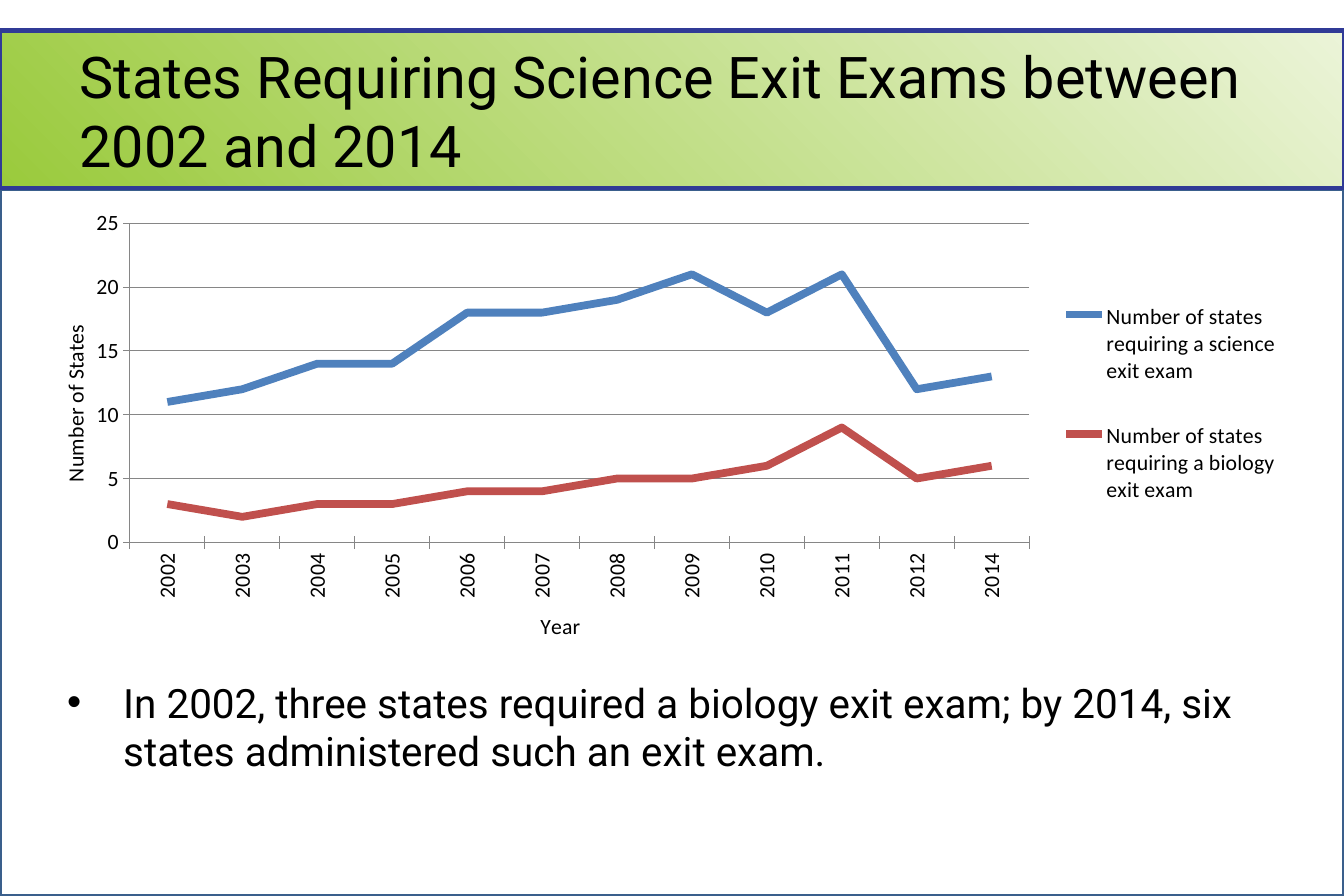
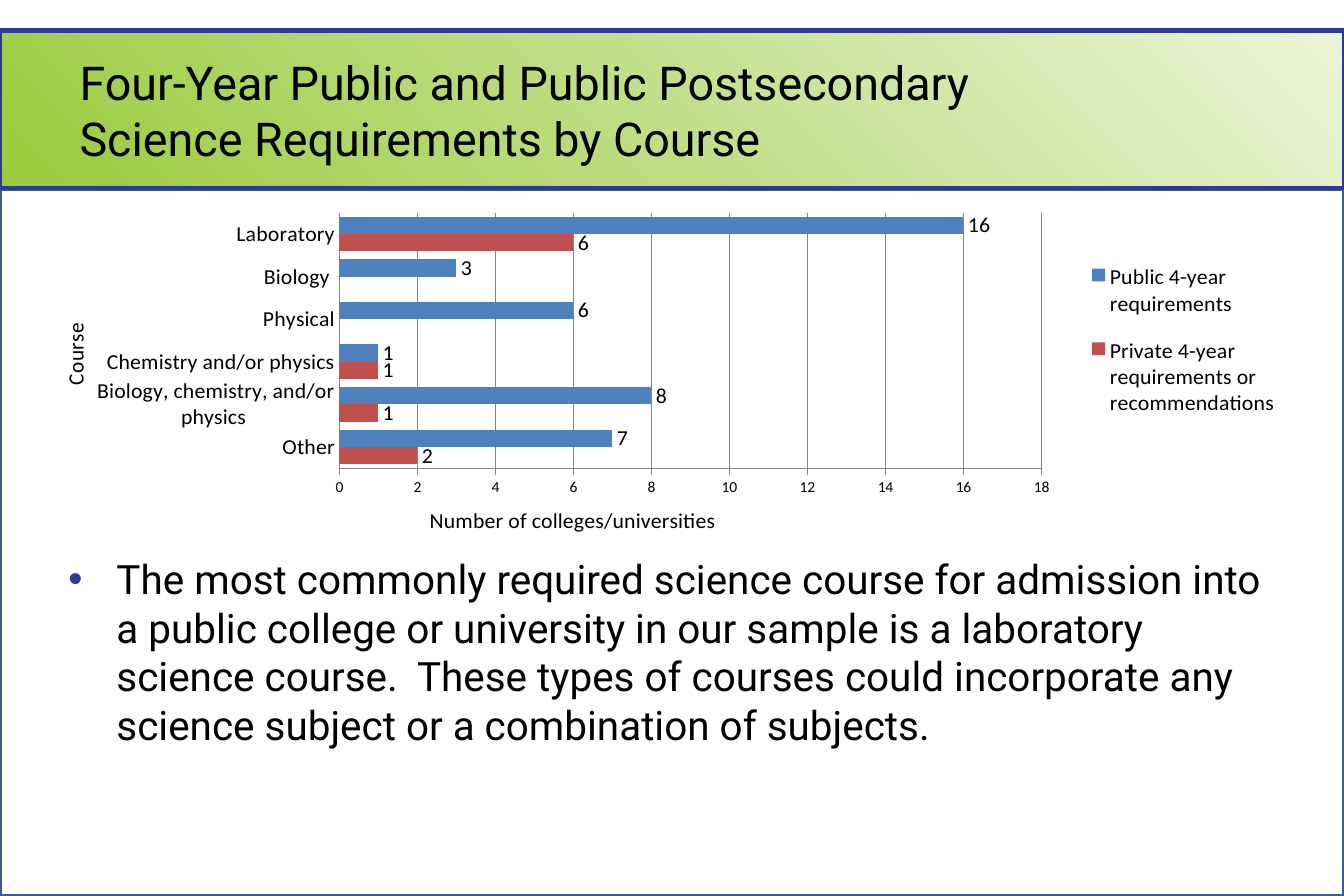
from dataclasses import dataclass
from typing import Any

from pptx import Presentation
from pptx.chart.data import CategoryChartData
from pptx.dml.color import RGBColor
from pptx.enum.chart import XL_CHART_TYPE, XL_LABEL_POSITION, XL_LEGEND_POSITION, XL_TICK_MARK
from pptx.enum.shapes import MSO_SHAPE
from pptx.enum.text import MSO_ANCHOR, MSO_AUTO_SIZE, PP_ALIGN
from pptx.oxml import parse_xml
from pptx.oxml.ns import nsdecls
from pptx.util import Inches, Pt

FACE = "Roboto"
BLACK = "000000"
NAVY = "303A96"
STEEL = "3A5F8C"
GREY = "868686"
BLUE = "4F81BD"
RED = "C0504D"
LEFT, WIDE = 0.5, 11


@dataclass(frozen=True)
class Row:
    name: str
    vals: tuple[int, ...]
    tint: str


@dataclass(frozen=True)
class Axis:
    title: str
    spot: tuple[float, float]
    tick: XL_TICK_MARK
    size: int = 14


@dataclass(frozen=True)
class Graph:
    kind: XL_CHART_TYPE
    top: float
    high: float
    cats: tuple[str, ...]
    rows: tuple[Row, ...]
    groups: Axis
    counts: Axis
    peak: int
    step: int
    plot: tuple[float, ...]
    key: tuple[float, ...]


@dataclass(frozen=True)
class Point:
    text: str
    top: float
    high: float
    hang: float
    pad: tuple[float, float]
    tint: str = BLACK


@dataclass(frozen=True)
class Page:
    lines: tuple[str, ...]
    size: int
    graph: Graph
    point: Point


def hue(code: str) -> RGBColor:
    return RGBColor.from_string(code)


def move(shape: Any, left: float, top: float, wide: float, high: float) -> None:
    shape.left, shape.top = Inches(left), Inches(top)
    shape.width, shape.height = Inches(wide), Inches(high)


def inset(frame: Any, side: float, edge: float) -> None:
    frame.margin_left = frame.margin_right = Inches(side)
    frame.margin_top = frame.margin_bottom = Inches(edge)
    frame.word_wrap = True
    frame.auto_size = MSO_AUTO_SIZE.NONE


def write(para: Any, text: str, size: int) -> None:
    run = para.add_run()
    run.text = text
    run.font.name, run.font.size = FACE, Pt(size)
    run.font.color.rgb = hue(BLACK)


def box(slide: Any, top: float, high: float, tint: str, width: int) -> Any:
    shape = slide.shapes.add_shape(
        MSO_SHAPE.RECTANGLE, 0, Inches(top), Inches(12), Inches(high))
    shape.shadow.inherit = False
    shape.fill.background()
    shape.line.color.rgb = hue(tint)
    shape.line.width = Pt(width)
    return shape


def dress(deck: Any, slide: Any) -> None:
    frame = box(slide, 1.69, 6.31, STEEL, 2)
    band = box(slide, 0.27, 1.41, NAVY, 3)
    band.fill.gradient()
    band.fill.gradient_angle = 45
    for stop, tint in zip(band.fill.gradient_stops, ("9ACA3C", "EBF4D8")):
        stop.color.rgb = hue(tint)
    tree = deck.slide_master.shapes.element
    for spot, shape in enumerate((frame, band), 2):
        shape.element.nvSpPr.cNvPr.id = 20 + spot
        tree.insert(spot, shape.element)


def head(slide: Any, page: Page) -> None:
    title = slide.shapes.title
    move(title, 0.6, 0.32, 10.8, 1.33)
    frame = title.text_frame
    inset(frame, 0.11, 0.06)
    frame.vertical_anchor = MSO_ANCHOR.MIDDLE
    para = frame.paragraphs[0]
    para.alignment = PP_ALIGN.LEFT
    for spot, line in enumerate(page.lines):
        if spot:
            para.add_line_break()
        write(para, line, page.size)


def list_point(slide: Any, point: Point) -> None:
    body = slide.placeholders[1]
    move(body, LEFT, point.top, WIDE, point.high)
    inset(body.text_frame, *point.pad)
    para = body.text_frame.paragraphs[0]
    para.space_before = Pt(0)
    props = body.element.xpath(".//a:pPr")[0]
    props.set("marL", str(Inches(point.hang)))
    props.set("indent", str(-Inches(point.hang)))
    for mark in (
        f'<a:buClr {nsdecls("a")}><a:srgbClr val="{point.tint}"/></a:buClr>',
        f'<a:buFont {nsdecls("a")} typeface="Arial"/>',
        f'<a:buChar {nsdecls("a")} char="•"/>',
    ):
        props.append(parse_xml(mark))
    write(para, point.text, 26)


def place(node: Any, spot: int, parts: tuple[float, ...], inner: bool = False) -> None:
    for old in node.xpath("./c:layout"):
        node.remove(old)
    tags = '<c:layoutTarget val="inner"/>' if inner else ""
    tags += '<c:xMode val="edge"/><c:yMode val="edge"/>'
    tags += "".join(f'<c:{tag} val="{part}"/>' for tag, part in zip("xywh", parts))
    node.insert(spot, parse_xml(
        f'<c:layout {nsdecls("c")}><c:manualLayout>{tags}</c:manualLayout></c:layout>'))


def style(axis: Any, plan: Axis) -> None:
    axis.major_tick_mark = plan.tick
    axis.minor_tick_mark = XL_TICK_MARK.NONE
    axis.tick_labels.font.size = Pt(plan.size)
    axis.format.line.color.rgb = hue(GREY)
    axis.format.line.width = Pt(0.75)
    run = axis.axis_title.text_frame.paragraphs[0].add_run()
    run.text = plan.title
    run.font.size, run.font.bold = Pt(14), False
    run.font.name, run.font.color.rgb = "Calibri", hue(BLACK)


def draw(slide: Any, graph: Graph) -> None:
    data = CategoryChartData()
    data.categories = graph.cats
    for row in graph.rows:
        data.add_series(row.name, row.vals)
    chart = slide.shapes.add_chart(
        graph.kind, Inches(LEFT), Inches(graph.top),
        Inches(WIDE), Inches(graph.high), data).chart
    chart.has_title = False
    chart.font.name, chart.font.size = "Calibri", Pt(10)
    chart.font.color.rgb = hue(BLACK)
    style(chart.category_axis, graph.groups)
    axis = chart.value_axis
    style(axis, graph.counts)
    axis.minimum_scale, axis.maximum_scale = 0, graph.peak
    axis.major_unit = graph.step
    axis.has_major_gridlines = True
    axis.major_gridlines.format.line.color.rgb = hue(GREY)
    axis.major_gridlines.format.line.width = Pt(0.75)
    chart.has_legend = True
    chart.legend.position = XL_LEGEND_POSITION.RIGHT
    chart.legend.include_in_layout = False
    chart.legend.font.size = Pt(14)
    plot = chart.plots[0]
    plot.vary_by_categories = False
    lined = graph.kind == XL_CHART_TYPE.LINE
    for ser, row in zip(plot.series, graph.rows):
        if lined:
            ser.smooth = False
            ser.format.line.color.rgb = hue(row.tint)
            ser.format.line.width = Pt(5)
        else:
            ser.format.fill.solid()
            ser.format.fill.fore_color.rgb = hue(row.tint)
            tags = ser.data_labels
            tags.show_value = True
            tags.number_format, tags.number_format_is_linked = "0;;;", False
            tags.position = XL_LABEL_POSITION.OUTSIDE_END
            tags.font.size = Pt(14)
    root = chart.element
    if lined:
        root.xpath(".//c:catAx/c:txPr/a:bodyPr")[0].set("rot", "-5400000")
    else:
        plot.gap_width, plot.overlap = 45, 0
    place(root.xpath(".//c:plotArea")[0], 0, graph.plot, True)
    place(root.xpath(".//c:legend")[0], 1, graph.key)
    place(root.xpath(".//c:catAx/c:title")[0], 1, graph.groups.spot)
    place(root.xpath(".//c:valAx/c:title")[0], 1, graph.counts.spot)


PAGES = (
    Page(
        ("States Requiring Science Exit Exams between 2002 and 2014",), 37,
        Graph(
            XL_CHART_TYPE.LINE, 1.87, 4.13,
            tuple(str(year) for year in (*range(2002, 2013), 2014)),
            (Row("Number of states requiring a science exit exam",
                 (11, 12, 14, 14, 18, 18, 19, 21, 18, 21, 12, 13), BLUE),
             Row("Number of states requiring a biology exit exam",
                 (3, 2, 3, 3, 4, 4, 5, 5, 6, 9, 5, 6), RED)),
            Axis("Year", (0.39, 0.86), XL_TICK_MARK.CROSS),
            Axis("Number of States", (0, 0.24), XL_TICK_MARK.OUTSIDE),
            25, 5, (0.06, 0.03, 0.73, 0.69), (0.81, 0.12, 0.19, 0.6)),
        Point("In 2002, three states required a biology exit exam; by 2014, six "
              "states administered such an exit exam.", 6, 0.98, 0.5, (0.1, 0.05)),
    ),
    Page(
        ("Four-Year Public and Public Postsecondary ",
         "Science Requirements by Course"), 30,
        Graph(
            XL_CHART_TYPE.BAR_CLUSTERED, 1.75, 3.08,
            ("Other", "Biology, chemistry, and/or physics ",
             "Chemistry and/or physics", "Physical", "Biology ", "Laboratory"),
            (Row("Private 4-year requirements or recommendations",
                 (2, 1, 1, 0, 0, 6), RED),
             Row("Public 4-year requirements", (7, 8, 1, 6, 3, 16), BLUE)),
            Axis("Course", (0, 0.37), XL_TICK_MARK.NONE),
            Axis("Number of colleges/universities", (0.3, 0.91),
                 XL_TICK_MARK.OUTSIDE, 10),
            18, 2, (0.23, 0.05, 0.57, 0.76), (0.83, 0.14, 0.17, 0.58)),
        Point("The most commonly required science course for admission into a "
              "public college or university in our sample is a laboratory science "
              "course.  These types of courses could incorporate any science "
              "subject or a combination of subjects.",
              4.89, 2.26, 0.43, (0.11, 0.06), NAVY),
    ),
)


def main() -> None:
    deck = Presentation()
    deck.slide_width, deck.slide_height = Inches(12), Inches(8)
    for spot, page in enumerate(PAGES):
        slide = deck.slides.add_slide(deck.slide_layouts[1])
        if spot == 0:
            dress(deck, slide)
        head(slide, page)
        draw(slide, page.graph)
        list_point(slide, page.point)
    deck.save("out.pptx")


if __name__ == "__main__":
    main()
